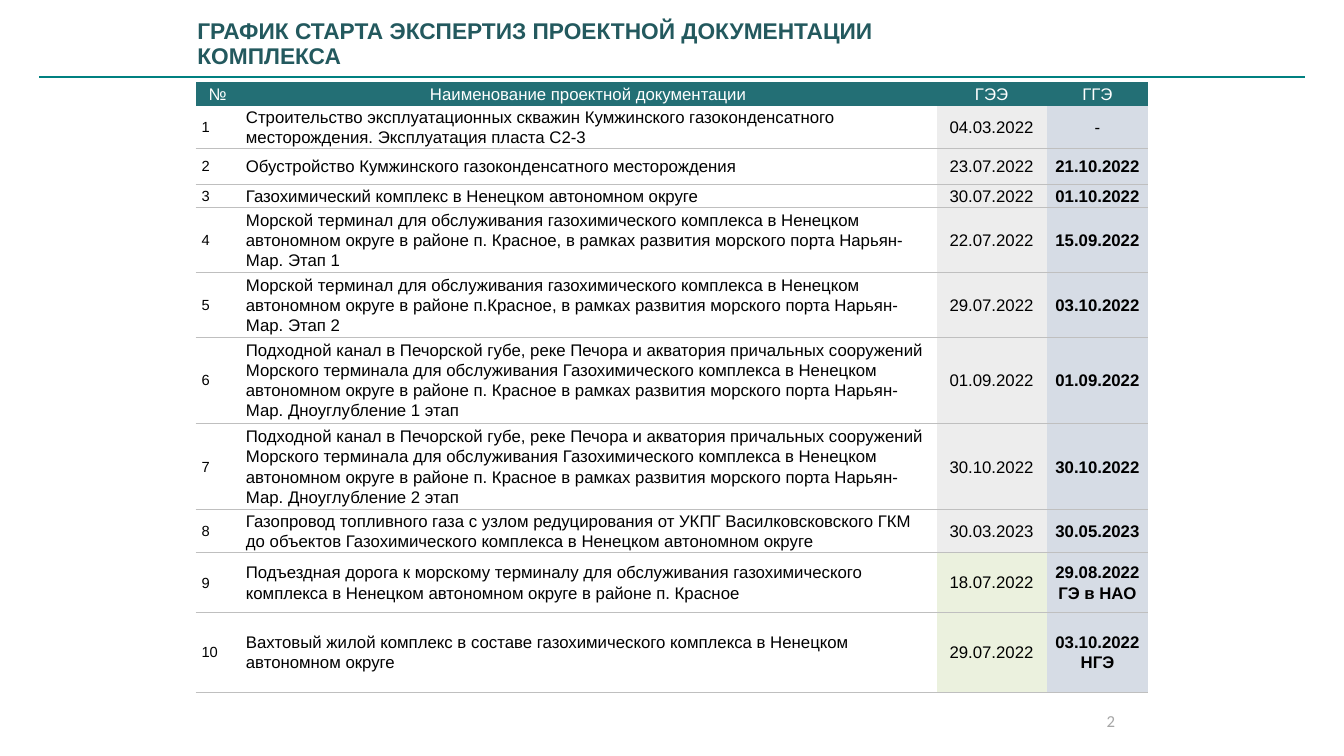
from lxml import etree
from pptx import Presentation
from pptx import util as u
from pptx.dml.color import RGBColor
from pptx.enum import shapes, text
from pptx.oxml.ns import qn

COLORS = {
    "title": "23595E", "rule": "008080", "head": "236F75", "white": "FFFFFF",
    "black": "000000", "border": "BFBFBF", "gray": "EDEDED", "green": "EBF1DE",
    "blue": "D6DCE5", "number": "A6A6A6",
}
LEFT, CENTER, RIGHT = text.PP_ALIGN.LEFT, text.PP_ALIGN.CENTER, text.PP_ALIGN.RIGHT

prs = Presentation()
prs.slide_width, prs.slide_height = u.Inches(13.33), u.Inches(7.5)
s = prs.slides.add_slide(prs.slide_layouts[6])


def place(left, top, width, height):
    W, H = prs.slide_width / 100, prs.slide_height / 100
    return int(left * W), int(top * H), int(width * W), int(height * H)


def write(tf, content, size=12, color="black", bold=False, font="Arial",
          align=LEFT, spacing=1.0, after=0):
    tf.word_wrap = True
    p = tf.paragraphs[0]
    p.alignment, p.line_spacing, p.space_after = align, spacing, u.Pt(after)
    r = p.add_run()
    r.text = content
    r.font.size, r.font.bold, r.font.name = u.Pt(size), bold, font
    r.font.color.rgb = RGBColor.from_string(COLORS[color])


x1, y1, x2, y2 = place(2.93, 10.13, 97.07, 10.13)
rule = s.shapes.add_connector(shapes.MSO_CONNECTOR.STRAIGHT, x1, y1, x2, y2)
rule.line.color.rgb = RGBColor.from_string(COLORS["rule"])
rule.line.width = u.Pt(1.5)
etree.SubElement(rule._element.spPr, qn("a:effectLst"))

title = s.shapes.add_textbox(*place(13.95, 2.8, 57.39, 6.27))
title.text_frame.vertical_anchor = text.MSO_ANCHOR.MIDDLE
write(title.text_frame, "ГРАФИК СТАРТА ЭКСПЕРТИЗ ПРОЕКТНОЙ ДОКУМЕНТАЦИИ КОМПЛЕКСА",
      size=16.2, color="title", bold=True, spacing=0.9)

terminal = ("Морской терминал для обслуживания газохимического комплекса в Ненецком автономном "
            "округе в районе {}Красное, в рамках развития морского порта Нарьян-Мар. Этап {}")
channel = ("Подходной канал в Печорской губе, реке Печора и акватория причальных сооружений "
           "Морского терминала для обслуживания Газохимического комплекса в Ненецком автономном "
           "округе в районе п. Красное в рамках развития морского порта Нарьян-Мар. "
           "Дноуглубление {} этап")
projects = [
    (5.33, "Строительство эксплуатационных скважин Кумжинского газоконденсатного "
           "месторождения. Эксплуатация пласта С2-3", "04.03.2022", "-"),
    (4.65, "Обустройство Кумжинского газоконденсатного месторождения",
     "23.07.2022", "21.10.2022"),
    (3.17, "Газохимический комплекс в Ненецком автономном округе", "30.07.2022", "01.10.2022"),
    (7.95, terminal.format("п. ", 1), "22.07.2022", "15.09.2022"),
    (7.95, terminal.format("п.", 2), "29.07.2022", "03.10.2022"),
    (10.65, channel.format(1), "01.09.2022", "01.09.2022"),
    (10.65, channel.format(2), "30.10.2022", "30.10.2022"),
    (5.4, "Газопровод топливного газа с узлом редуцирования от УКПГ Василковсковского ГКМ "
          "до объектов Газохимического комплекса в Ненецком автономном округе",
     "30.03.2023", "30.05.2023"),
    (7.85, "Подъездная дорога к морскому терминалу для обслуживания газохимического комплекса "
           "в Ненецком автономном округе в районе п. Красное",
     "18.07.2022", "29.08.2022 ГЭ в НАО"),
    (10.6, "Вахтовый жилой комплекс в составе газохимического комплекса в Ненецком "
           "автономном округе", "29.07.2022", "03.10.2022 НГЭ"),
]
rows = [(3.17, "№", "Наименование проектной документации", "ГЭЭ", "ГГЭ")]
rows += [(h, str(n), *cells) for n, (h, *cells) in enumerate(projects, 1)]
widths = [3.3, 51.84, 8.18, 7.58]

frame = s.shapes.add_table(len(rows), len(widths),
                           *place(14.55, 10.8, sum(widths), sum(row[0] for row in rows)))
table = frame.table
table.first_row = table.horz_banding = False
for col, width in zip(table.columns, widths):
    col.width = place(0, 0, width, 0)[2]

for i, (height, *cells) in enumerate(rows):
    table.rows[i].height = place(0, 0, 0, height)[3]
    for j, content in enumerate(cells):
        cell = table.cell(i, j)
        cell.margin_left = cell.margin_right = u.Inches(0.06)
        cell.margin_top = cell.margin_bottom = 0
        cell.vertical_anchor = text.MSO_ANCHOR.MIDDLE
        tcPr = cell._tc.get_or_add_tcPr()
        for side in ("lnL", "lnR", "lnT", "lnB"):
            ln = etree.SubElement(tcPr, qn(f"a:{side}"), w=str(u.Pt(0.5)))
            if (side == "lnB" and i > 0) or (side == "lnT" and i > 1):
                fill = etree.SubElement(ln, qn("a:solidFill"))
                etree.SubElement(fill, qn("a:srgbClr"), val=COLORS["border"])
            else:
                etree.SubElement(ln, qn("a:noFill"))
        shade = "head" if i == 0 else (None, None, "green" if i > 8 else "gray", "blue")[j]
        if shade:
            cell.fill.solid()
            cell.fill.fore_color.rgb = RGBColor.from_string(COLORS[shade])
        else:
            cell.fill.background()
        write(cell.text_frame, content, size=10.5 if i and j == 0 else 12,
              color="black" if i else "white", bold=i > 1 and j == 3,
              align=CENTER if i == 0 or j > 1 else LEFT, spacing=1.07, after=8)

number = s.shapes.add_textbox(*place(66.24, 92.67, 17.48, 5.33))
number.text_frame.vertical_anchor = text.MSO_ANCHOR.MIDDLE
write(number.text_frame, "2", color="number", font="Calibri", align=RIGHT)

prs.save("out.pptx")
